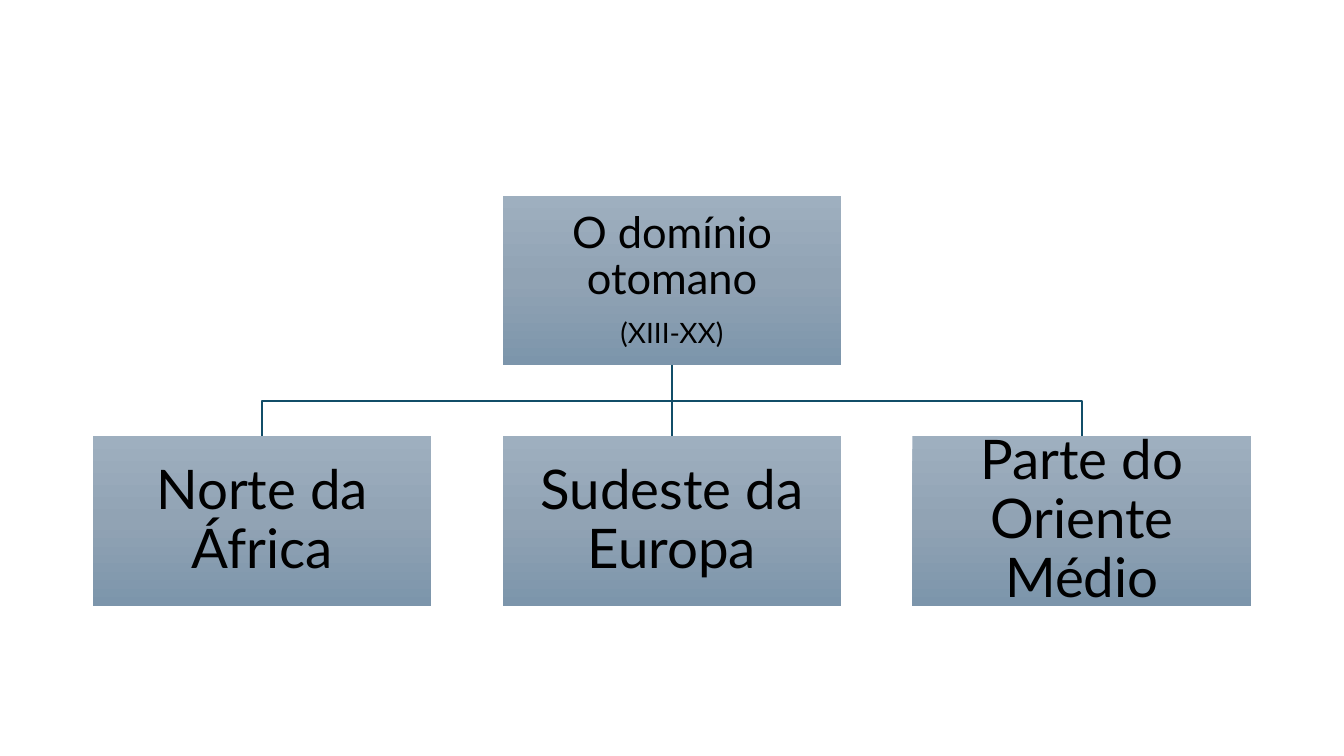
from copy import deepcopy
from pptx import Presentation
from pptx.dml.color import RGBColor
from pptx.enum.shapes import MSO_CONNECTOR, MSO_SHAPE
from pptx.enum.text import MSO_ANCHOR, PP_ALIGN
from pptx.oxml.ns import qn
from pptx.util import Inches, Pt

BOX_W, BOX_H = Inches(3.36), Inches(1.68)
COLUMNS = [Inches(0.92 + 4.065 * i) for i in range(3)]
ROOT_TOP, CHILD_TOP = Inches(1.94), Inches(4.33)
GRADIENT = [(0, "9EAFBF"), (0.5, "91A3B4"), (1, "7C95AB")]
BOXES = [
    (COLUMNS[1], ROOT_TOP, 0.02, [("O domínio otomano", 31), ("(XIII-XX)", 20)]),
    (COLUMNS[0], CHILD_TOP, 0.03, [("Norte da África", 39)]),
    (COLUMNS[1], CHILD_TOP, 0.03, [("Sudeste da Europa", 39)]),
    (COLUMNS[2], CHILD_TOP, 0.03, [("Parte do Oriente Médio", 39)]),
]


def rgb(color):
    return RGBColor.from_string(color)


def style_line(s):
    s.line.color.rgb = rgb("114D68")
    s.line.width = Pt(1.5)


prs = Presentation()
prs.slide_width, prs.slide_height = Inches(13.33), Inches(7.5)
slide = prs.slides.add_slide(prs.slide_layouts[6])
shapes = slide.shapes

# Branches from the root to its children
root_x, root_bottom = COLUMNS[1] + BOX_W // 2, ROOT_TOP + BOX_H
bar_y = (root_bottom + CHILD_TOP) // 2
for column in (COLUMNS[2], COLUMNS[0]):
    child_x = column + BOX_W // 2
    builder = shapes.build_freeform(root_x, root_bottom)
    builder.add_line_segments(
        [(root_x, bar_y), (child_x, bar_y), (child_x, CHILD_TOP)], close=False)
    branch = builder.convert_to_shape()
    branch.fill.background()
    branch.shadow.inherit = False
    style_line(branch)

stem = shapes.add_connector(MSO_CONNECTOR.STRAIGHT, root_x, root_bottom, root_x, CHILD_TOP)
style_line(stem)
stem._element.spPr.add_effectLst() if hasattr(stem._element.spPr, "add_effectLst") else \
    stem._element.spPr.get_or_add_effectLst()

# Boxes
for left, top, inset, paragraphs in BOXES:
    box = shapes.add_shape(MSO_SHAPE.RECTANGLE, left, top, BOX_W, BOX_H)
    box.shadow.inherit = False
    box.line.fill.background()
    box.fill.gradient()
    box.fill.gradient_angle = 270
    stops = box._element.spPr.find(".//" + qn("a:gsLst"))
    stops.insert(1, deepcopy(stops[0]))
    for stop, (position, color) in zip(box.fill.gradient_stops, GRADIENT):
        stop.position = position
        stop.color.rgb = rgb(color)

    tf = box.text_frame
    tf.word_wrap = True
    tf.vertical_anchor = MSO_ANCHOR.MIDDLE
    tf.margin_left = tf.margin_right = tf.margin_top = tf.margin_bottom = Inches(inset)
    for i, (text, size) in enumerate(paragraphs):
        p = tf.add_paragraph() if i else tf.paragraphs[0]
        p.text = text
        p.alignment = PP_ALIGN.CENTER
        p.line_spacing = 0.9
        p.space_after = Pt(round(0.35 * size))
        p.font.name = "Lato"
        p.font.size = Pt(size)
        p.font.color.rgb = rgb("000000")

prs.save("out.pptx")
